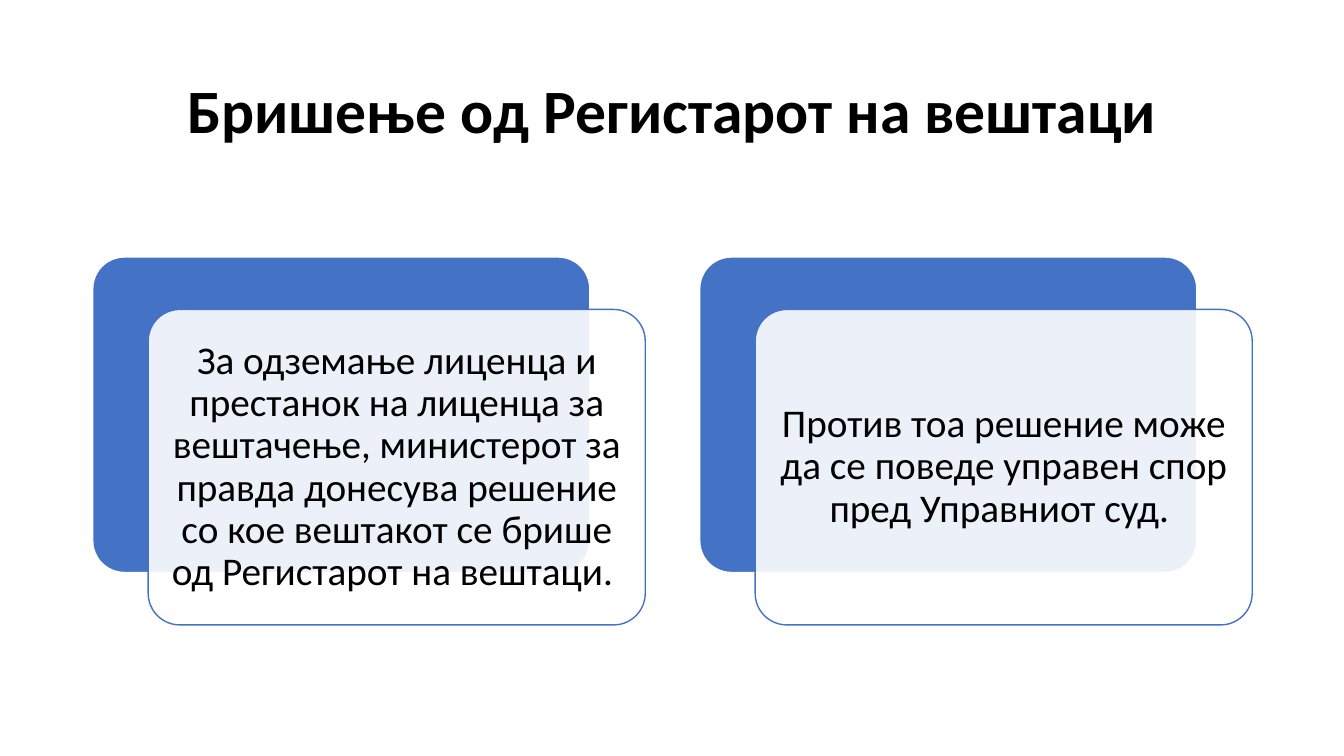
from dataclasses import dataclass

from lxml import etree
from pptx import Presentation
from pptx.dml.color import RGBColor
from pptx.enum import shapes, text
from pptx.oxml import ns
from pptx.util import Inches, Pt


@dataclass(frozen=True)
class Theme:
    font: str = "Calibri"
    ink: str = "000000"
    paper: str = "FFFFFF"
    accent: str = "4472C4"
    title_size: int = 44
    body_size: int = 28


THEME = Theme()
TITLE = "Бришење од Регистарот на вештаци"
CARDS = [
    "За одземање лиценца и престанок на лиценца за вештачење, министерот за правда "
    "донесува решение со кое вештакот се брише од Регистарот на вештаци. ",
    "Против тоа решение може да се поведе управен спор пред Управниот суд. ",
]


def write(sp, content, size, bold=False, inset_x=0.1, inset_y=0.05):
    tf = sp.text_frame
    tf.word_wrap = True
    tf.vertical_anchor = text.MSO_ANCHOR.MIDDLE
    tf.margin_left = tf.margin_right = Inches(inset_x)
    tf.margin_top = tf.margin_bottom = Inches(inset_y)
    p = tf.paragraphs[0]
    p.alignment = text.PP_ALIGN.CENTER
    p.line_spacing = 0.9
    r = p.add_run()
    r.text = content
    r.font.name = THEME.font
    r.font.size = Pt(size)
    r.font.bold = bold
    r.font.color.rgb = RGBColor.from_string(THEME.ink)


def add_panel(s, x, y, w, h, fill, line, opacity=100):
    sp = s.shapes.add_shape(shapes.MSO_SHAPE.ROUNDED_RECTANGLE,
                            Inches(x), Inches(y), Inches(w), Inches(h))
    sp.adjustments[0] = 0.1
    sp.shadow.inherit = False
    sp.fill.solid()
    sp.fill.fore_color.rgb = RGBColor.from_string(fill)
    sp.line.color.rgb = RGBColor.from_string(line)
    sp.line.width = Pt(1)
    if opacity < 100:
        color = sp.fill._xPr.find(ns.qn("a:solidFill"))[0]
        etree.SubElement(color, ns.qn("a:alpha"), val=str(opacity * 1000))
    return sp


def add_title(s, x, y, w, h):
    sp = s.shapes.add_textbox(Inches(x), Inches(y), Inches(w), Inches(h))
    write(sp, TITLE, THEME.title_size, bold=True)


def add_card(s, content, x, y, w, h, shift_x=0.55, shift_y=0.52):
    """Draw a solid panel with a translucent text panel shifted over it."""
    pw, ph = w - shift_x, h - shift_y
    add_panel(s, x, y, pw, ph, THEME.accent, THEME.paper)
    front = add_panel(s, x + shift_x, y + shift_y, pw, ph,
                      THEME.paper, THEME.accent, opacity=90)
    write(front, content, THEME.body_size, inset_x=0.12, inset_y=0.12)


def add_cards(s, x, y, w, h, gap=0.54):
    card_w = (w - gap * (len(CARDS) - 1)) / len(CARDS)
    for i, content in enumerate(CARDS):
        add_card(s, content, x + i * (card_w + gap), y, card_w, h)


def main():
    prs = Presentation()
    prs.slide_width, prs.slide_height = Inches(13.33), Inches(7.5)
    s = prs.slides.add_slide(prs.slide_layouts[6])
    add_title(s, 0.92, 0.4, 11.5, 1.45)
    add_cards(s, 0.92, 2.55, 11.5, 3.65)
    prs.save("out.pptx")


if __name__ == "__main__":
    main()
